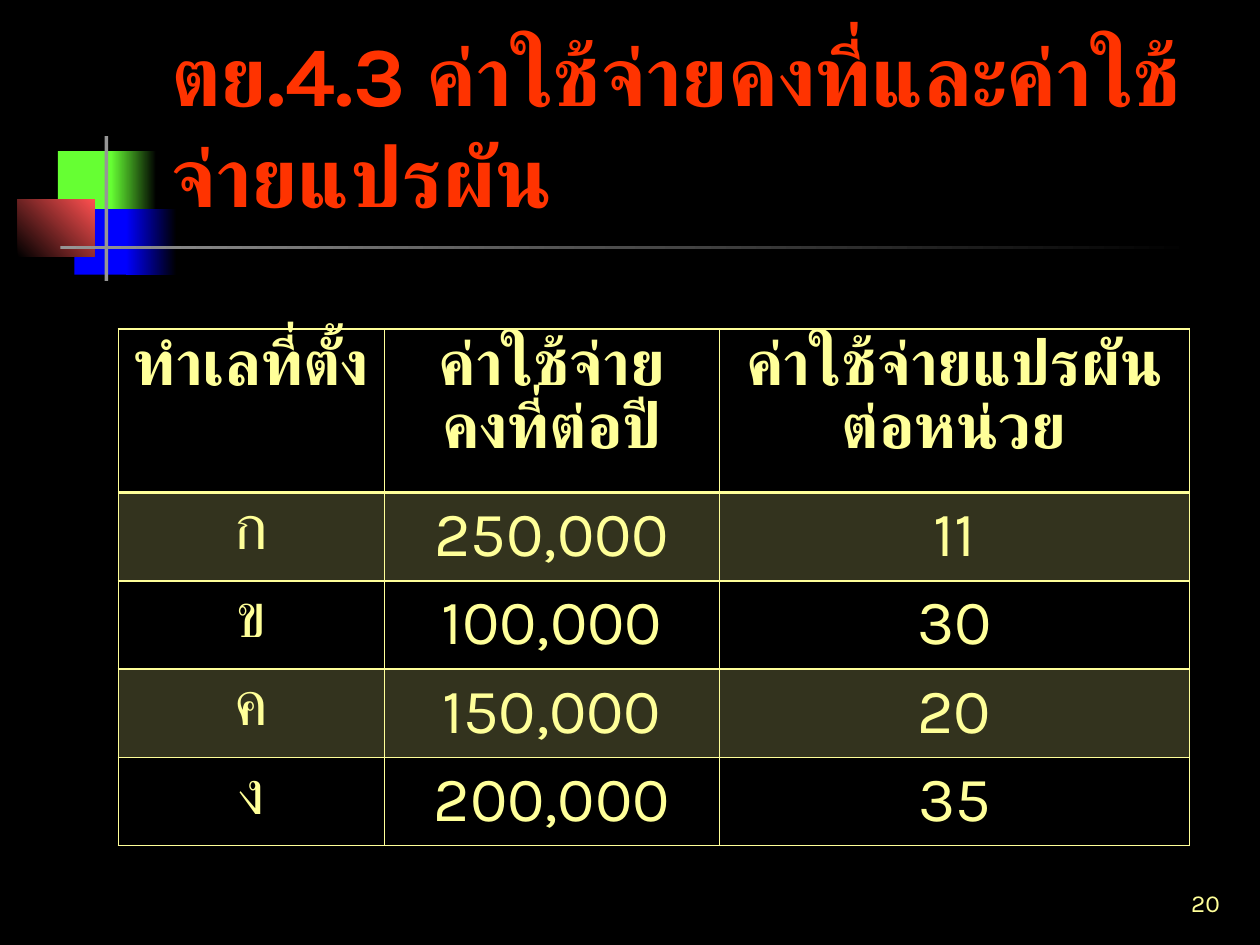
from lxml import etree
from pptx import Presentation
from pptx.dml.color import RGBColor
from pptx.enum.shapes import MSO_SHAPE
from pptx.enum.text import MSO_ANCHOR, PP_ALIGN
from pptx.oxml.ns import qn
from pptx.util import Inches, Pt

RECTANGLE = MSO_SHAPE.RECTANGLE
BOTTOM = MSO_ANCHOR.BOTTOM
LEFT, CENTER, RIGHT = PP_ALIGN.LEFT, PP_ALIGN.CENTER, PP_ALIGN.RIGHT

TITLE = "ตย.4.3 ค่าใช้จ่ายคงที่และค่าใช้จ่ายแปรผัน"
PAGE_NUMBER = "20"
COST_ROWS = [
    ("ทำเลที่ตั้ง", "ค่าใช้จ่ายคงที่ต่อปี", "ค่าใช้จ่ายแปรผันต่อหน่วย"),
    ("ก", "250,000", "11"),
    ("ข", "100,000", "30"),
    ("ค", "150,000", "20"),
    ("ง", "200,000", "35"),
]

THEME = {
    "font": "Karla",
    "background": "000000",
    "title": "FF3300",
    "text": "FFFF99",
    "green": "66FF33",
    "blue": "0000FF",
    "red": "FF5050",
    "gray": "969696",
    "title_size": 48,
    "table_size": 36,
    "number_size": 14,
    "band_alpha": 20,
    "line": 1,
    "header_line": 2,
}

# box, colours from start to end, angle counterclockwise
ORNAMENTS = [
    ((0.46, 1.2, 0.48, 0.52), ("green",), 0),
    ((0.88, 1.2, 0.36, 0.52), ("green", "background"), 0),
    ((0.59, 1.66, 0.46, 0.52), ("blue",), 0),
    ((1, 1.66, 0.4, 0.52), ("blue", "background"), 0),
    ((0.14, 1.58, 0.61, 0.46), ("background", "red"), 45),
    ((0.83, 1.08, 0.03, 1.15), ("gray",), 0),
    ((0.48, 1.95, 9, 0.03), ("gray", "background"), 0),
]
TITLE_BOX = (1.26, 0.23, 8.52, 1.6)
NUMBER_BOX = (7.7, 6.83, 2.08, 0.5)
TABLE_LEFT, TABLE_TOP = 0.94, 2.61
COLUMN_WIDTHS = (2.11, 2.66, 3.73)
HEADER_HEIGHT, ROW_HEIGHT = 1.1, 0.68


def rgb(name):
    return RGBColor.from_string(THEME[name])


def inches(box):
    return [Inches(value) for value in box]


def style_text(frame, text, size, color, align, bold=False):
    frame.text = text
    paragraph = frame.paragraphs[0]
    paragraph.alignment = align
    font = paragraph.runs[0].font
    font.name = THEME["font"]
    font.size = Pt(THEME[size])
    font.bold = bold
    font.color.rgb = rgb(color)


def add_ornament(slide, box, colors, angle):
    ornament = slide.shapes.add_shape(RECTANGLE, *inches(box))
    ornament.shadow.inherit = False
    ornament.line.fill.background()
    if len(colors) == 1:
        ornament.fill.solid()
        ornament.fill.fore_color.rgb = rgb(colors[0])
        return
    ornament.fill.gradient()
    ornament.fill.gradient_angle = angle
    for stop, color in zip(ornament.fill.gradient_stops, colors):
        stop.color.rgb = rgb(color)


def add_label(slide, box, *style):
    frame = slide.shapes.add_textbox(*inches(box)).text_frame
    frame.word_wrap = True
    frame.vertical_anchor = BOTTOM
    style_text(frame, *style)


def add_borders(cell, top, bottom):
    properties = cell._tc.get_or_add_tcPr()
    widths = {"L": THEME["line"], "R": THEME["line"], "T": top, "B": bottom}
    for side, width in widths.items():
        border = etree.SubElement(properties, qn(f"a:ln{side}"), w=str(Pt(width)))
        fill = etree.SubElement(border, qn("a:solidFill"))
        etree.SubElement(fill, qn("a:srgbClr"), val=THEME["text"])


def fill_band(cell):
    cell.fill.solid()
    cell.fill.fore_color.rgb = rgb("text")
    color = cell._tc.tcPr.find(qn("a:solidFill"))[0]
    etree.SubElement(color, qn("a:alpha"), val=str(THEME["band_alpha"] * 1000))


def add_cost_table(slide):
    heights = [HEADER_HEIGHT] + [ROW_HEIGHT] * (len(COST_ROWS) - 1)
    box = (TABLE_LEFT, TABLE_TOP, sum(COLUMN_WIDTHS), sum(heights))
    table = slide.shapes.add_table(
        len(COST_ROWS), len(COLUMN_WIDTHS), *inches(box)).table
    table.first_row = table.horz_banding = False
    for column, width in zip(table.columns, COLUMN_WIDTHS):
        column.width = Inches(width)
    for index, (values, height) in enumerate(zip(COST_ROWS, heights)):
        table.rows[index].height = Inches(height)
        top = THEME["header_line" if index == 1 else "line"]
        bottom = THEME["header_line" if index == 0 else "line"]
        for cell, value in zip(table.rows[index].cells, values):
            style_text(cell.text_frame, value, "table_size", "text", CENTER, index == 0)
            add_borders(cell, top, bottom)
            if index % 2:
                fill_band(cell)
            else:
                cell.fill.background()


def main():
    deck = Presentation()
    deck.slide_width, deck.slide_height = Inches(10), Inches(7.5)
    slide = deck.slides.add_slide(deck.slide_layouts[6])
    slide.background.fill.solid()
    slide.background.fill.fore_color.rgb = rgb("background")
    for ornament in ORNAMENTS:
        add_ornament(slide, *ornament)
    add_label(slide, TITLE_BOX, TITLE, "title_size", "title", LEFT, True)
    add_cost_table(slide)
    add_label(slide, NUMBER_BOX, PAGE_NUMBER, "number_size", "text", RIGHT)
    deck.save("out.pptx")


if __name__ == "__main__":
    main()
